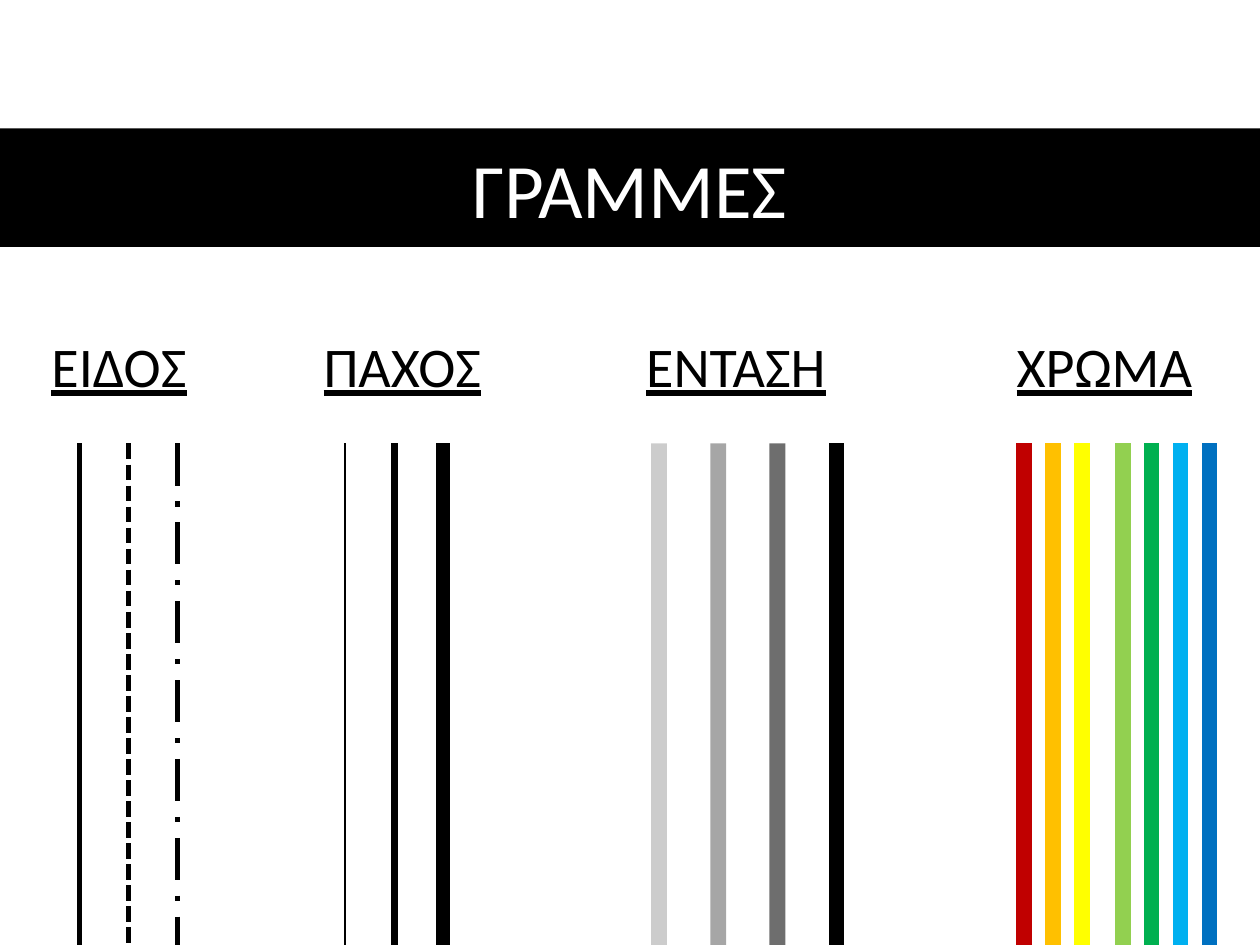
from lxml.etree import SubElement
from pptx import Presentation
from pptx.dml.color import RGBColor
from pptx.enum.dml import MSO_LINE_DASH_STYLE as Dash
from pptx.enum.shapes import MSO_CONNECTOR as Connector, MSO_SHAPE as Shape
from pptx.enum.text import MSO_ANCHOR as Anchor, PP_ALIGN as Align
from pptx.oxml.ns import qn
from pptx.util import Inches, Pt

THEME = {"font": "Calibri", "ink": "000000", "paper": "FFFFFF",
         "title_size": 44, "heading_size": 32}
TITLE = "ΓΡΑΜΜΕΣ"
HEADINGS = ["ΕΙΔΟΣ", "ΠΑΧΟΣ", "ΕΝΤΑΣΗ", "ΧΡΩΜΑ"]
HEADING_TABS = [2.16, 4.72, 7.66]
LINE_TOP, LINE_BOTTOM = 3.52, 7.5

LINE_GROUPS = [
    {"left": 0.63, "step": 0.39, "lines": [
        {"width": 3},
        {"width": 3, "dash": Dash.SQUARE_DOT},
        {"width": 3, "dash": Dash.LONG_DASH_DOT}]},
    {"left": 2.74, "step": 0.39, "lines": [{"width": width} for width in (1, 4, 8)]},
    {"left": 5.23, "step": 0.47, "lines": [
        {"width": 9, "opacity": opacity} for opacity in (20, 34, 57, 100)]},
    {"left": 8.13, "step": 0.23, "lines": [
        {"width": 9, "color": color} for color in ("C00000", "FFC000", "FFFF00")]},
    {"left": 8.91, "step": 0.23, "lines": [
        {"width": 9, "color": color}
        for color in ("92D050", "00B050", "00B0F0", "0070C0")]},
]


def write(box, text, size, color, align=Align.LEFT, underline=None, tabs=()):
    frame = box.text_frame
    frame.word_wrap = True
    para = frame.paragraphs[0]
    para.alignment = align
    if tabs:
        tab_list = SubElement(para._p.get_or_add_pPr(), qn("a:tabLst"))
        for position in tabs:
            SubElement(tab_list, qn("a:tab"), pos=str(Inches(position)), algn="l")
    span = para.add_run()
    span.text = text
    span.font.name = THEME["font"]
    span.font.size = Pt(size)
    span.font.underline = underline
    span.font.color.rgb = RGBColor.from_string(color)


def draw_line(page, left, width, color=THEME["ink"], dash=None, opacity=100):
    line = page.shapes.add_connector(
        Connector.STRAIGHT, Inches(left), Inches(LINE_TOP),
        Inches(left), Inches(LINE_BOTTOM))
    line.line.width = Pt(width)
    line.line.color.rgb = RGBColor.from_string(color)
    if dash is not None:
        line.line.dash_style = dash
    properties = line._element.spPr
    if opacity < 100:
        ink = properties.find(".//" + qn("a:srgbClr"))
        SubElement(ink, qn("a:alpha"), val=str(opacity * 1000))
    SubElement(properties, qn("a:effectLst"))


def main():
    deck = Presentation()
    deck.slide_width, deck.slide_height = Inches(10), Inches(7.5)
    page = deck.slides.add_slide(deck.slide_layouts[6])

    heading_box = page.shapes.add_textbox(
        Inches(0.31), Inches(2.58), Inches(9.38), Inches(0.7))
    write(heading_box, "\t".join(HEADINGS), THEME["heading_size"], THEME["ink"],
          underline=True, tabs=HEADING_TABS)

    banner = page.shapes.add_shape(
        Shape.RECTANGLE, 0, Inches(1.02), Inches(10), Inches(0.94))
    banner.shadow.inherit = False
    banner.fill.solid()
    banner.fill.fore_color.rgb = RGBColor.from_string(THEME["ink"])
    banner.line.fill.background()
    banner.text_frame.vertical_anchor = Anchor.MIDDLE
    write(banner, TITLE, THEME["title_size"], THEME["paper"], align=Align.CENTER)

    for group in LINE_GROUPS:
        for index, style in enumerate(group["lines"]):
            draw_line(page, group["left"] + index * group["step"], **style)

    deck.save("out.pptx")


if __name__ == "__main__":
    main()
